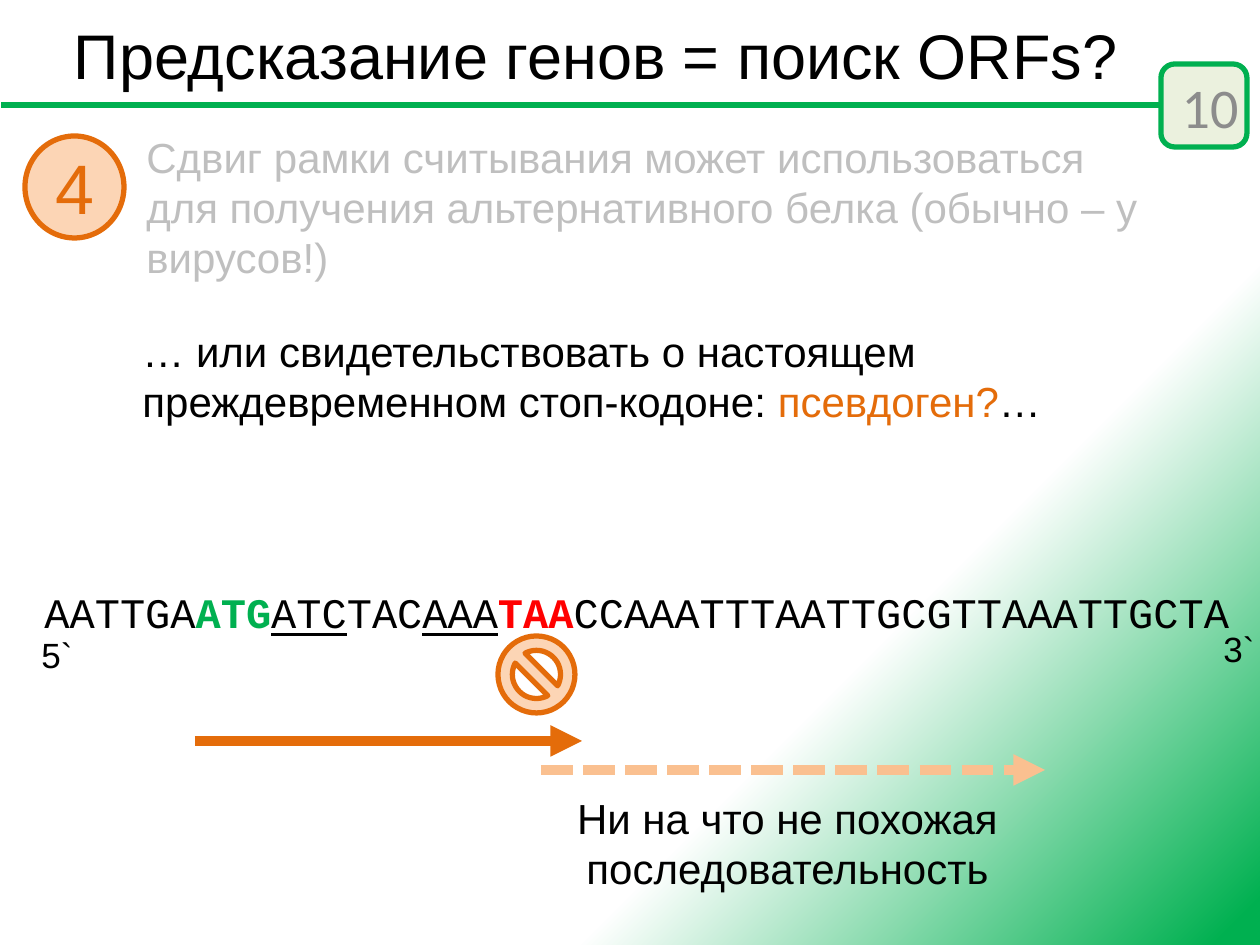
from lxml import etree
from pptx import Presentation
from pptx import util as u
from pptx.dml.color import RGBColor
from pptx.enum import dml, shapes, text
from pptx.oxml.ns import qn

SCALE = 914400 // 126
GREEN, ORANGE, PEACH = "00B050", "E46C0A", "FCD5B5"
LEFT, MID, RIGHT = text.PP_ALIGN.LEFT, text.PP_ALIGN.CENTER, text.PP_ALIGN.RIGHT
KIND = shapes.MSO_SHAPE


def rgb(code):
    return RGBColor.from_string(code)


def px(*vals):
    return [u.Emu(v * SCALE) for v in vals]


class Deck:
    """Holds the style and the current slide."""
    font = "Arial"
    size = 24
    ink = "000000"

    def __init__(self):
        self.prs = Presentation()
        self.prs.slide_width, self.prs.slide_height = px(1260, 945)
        self.slide = self.prs.slides.add_slide(self.prs.slide_layouts[5])

    def back(self, *stops):
        fill = self.slide.background.fill
        fill.gradient()
        for stop, (pos, code) in zip(fill.gradient_stops, stops):
            stop.position = pos
            stop.color.rgb = rgb(code)
        grad = self.slide.element.find(".//" + qn("a:gradFill"))
        grad.remove(grad.find(qn("a:lin")))
        way = etree.SubElement(grad, qn("a:path"), {"path": "circle"})
        etree.SubElement(way, qn("a:fillToRect"), r="100000", b="100000")

    def fill_in(self, frame, lines, size=None, color=None, font=None, align=LEFT):
        """Each line is a list of (words, colour, bold, underline) runs."""
        for i, line in enumerate(lines):
            para = frame.paragraphs[0] if i == 0 else frame.add_paragraph()
            para.alignment = align
            if isinstance(line, str):
                line = [(line,)]
            for words, *look in line:
                code, bold, under = look + [None, False, False][len(look):]
                run = para.add_run()
                run.text = words
                run.font.name = font or self.font
                run.font.size = u.Pt(size or self.size)
                run.font.color.rgb = rgb(code or color or self.ink)
                run.font.bold, run.font.underline = bold, under

    def title(self, box, words, size):
        item = self.slide.shapes.title
        item.left, item.top, item.width, item.height = px(*box)
        item.text_frame.vertical_anchor = text.MSO_ANCHOR.MIDDLE
        self.fill_in(item.text_frame, [words], size, align=MID)

    def label(self, box, *lines, wrap=True, anchor=text.MSO_ANCHOR.TOP, **style):
        frame = self.slide.shapes.add_textbox(*px(*box)).text_frame
        frame.word_wrap = wrap
        frame.vertical_anchor = anchor
        self.fill_in(frame, lines, **style)

    def shape(self, kind, box, fill, edge, words=None, **style):
        item = self.slide.shapes.add_shape(kind, *px(*box))
        item.shadow.inherit = False
        item.fill.solid()
        item.fill.fore_color.rgb = rgb(fill)
        item.line.color.rgb = rgb(edge)
        item.line.width = u.Pt(3)
        if words:
            item.text_frame.vertical_anchor = text.MSO_ANCHOR.MIDDLE
            self.fill_in(item.text_frame, [words], align=MID, **style)

    def line(self, start, end, y, color, width, arrow=False, dash=None):
        item = self.slide.shapes.add_connector(
            shapes.MSO_CONNECTOR.STRAIGHT, *px(start, y, end, y))
        item.line.color.rgb = rgb(color)
        item.line.width = u.Pt(width)
        if dash:
            item.line.dash_style = dash
        props = item.element.find(qn("p:spPr"))
        if arrow:
            etree.SubElement(props.find(qn("a:ln")), qn("a:tailEnd"), type="triangle")
        etree.SubElement(props, qn("a:effectLst"))


def main():
    deck = Deck()
    deck.back((0.69, "FFFFFF"), (0.98, GREEN))

    # Heading, rule and page number
    deck.title((25, 3, 1142, 102), "Предсказание генов = поиск ORFs?", 36)
    deck.line(1237, 1, 105, GREEN, 3)
    deck.shape(KIND.ROUNDED_RECTANGLE, (1161, 64, 86, 83), "EBF1DE", GREEN)
    deck.label((958, 81, 293, 50), "10", anchor=text.MSO_ANCHOR.MIDDLE,
               size=32, color="8C8C8C", font="Calibri", align=RIGHT)

    # Numbered statement
    deck.shape(KIND.OVAL, (25, 136, 99, 102), PEACH, ORANGE, "4",
               size=40, color=ORANGE)
    deck.label((134, 125, 1032, 165),
               "Сдвиг рамки считывания может использоваться для получения "
               "альтернативного белка (обычно – у вирусов!)", color="BFBFBF")
    deck.label((130, 319, 1032, 115), [
        ("… или свидетельствовать о настоящем преждевременном стоп-кодоне: ",),
        ("псевдоген?", ORANGE), ("…",)])

    # Sequence with start codon, stop codon and strand ends
    deck.label((32, 580, 1220, 63), [
        ("AATTGA",), ("ATG", GREEN, True), ("ATC", None, False, True),
        ("TAC",), ("AAA", None, False, True), ("TAA", "FF0000", True),
        ("CCAAATTTAATTGCGTTAAATTGCTA",)], wrap=False, font="Courier New")
    for x, y, words in ((29, 627, "5`"), (1211, 621, "3`")):
        deck.label((x, y, 57, 55), words, wrap=False, size=20)
    deck.shape(KIND.NO_SYMBOL, (498, 636, 77, 77), PEACH, ORANGE)

    # Reading frame and the part after the stop
    deck.line(195, 582, 741, ORANGE, 6, arrow=True)
    deck.line(541, 1045, 770, "FAC090", 6, arrow=True,
              dash=dml.MSO_LINE.SQUARE_DOT)
    deck.label((543, 786, 489, 115), "Ни на что не похожая",
               "последовательность", align=MID)

    deck.prs.save("out.pptx")


if __name__ == "__main__":
    main()
